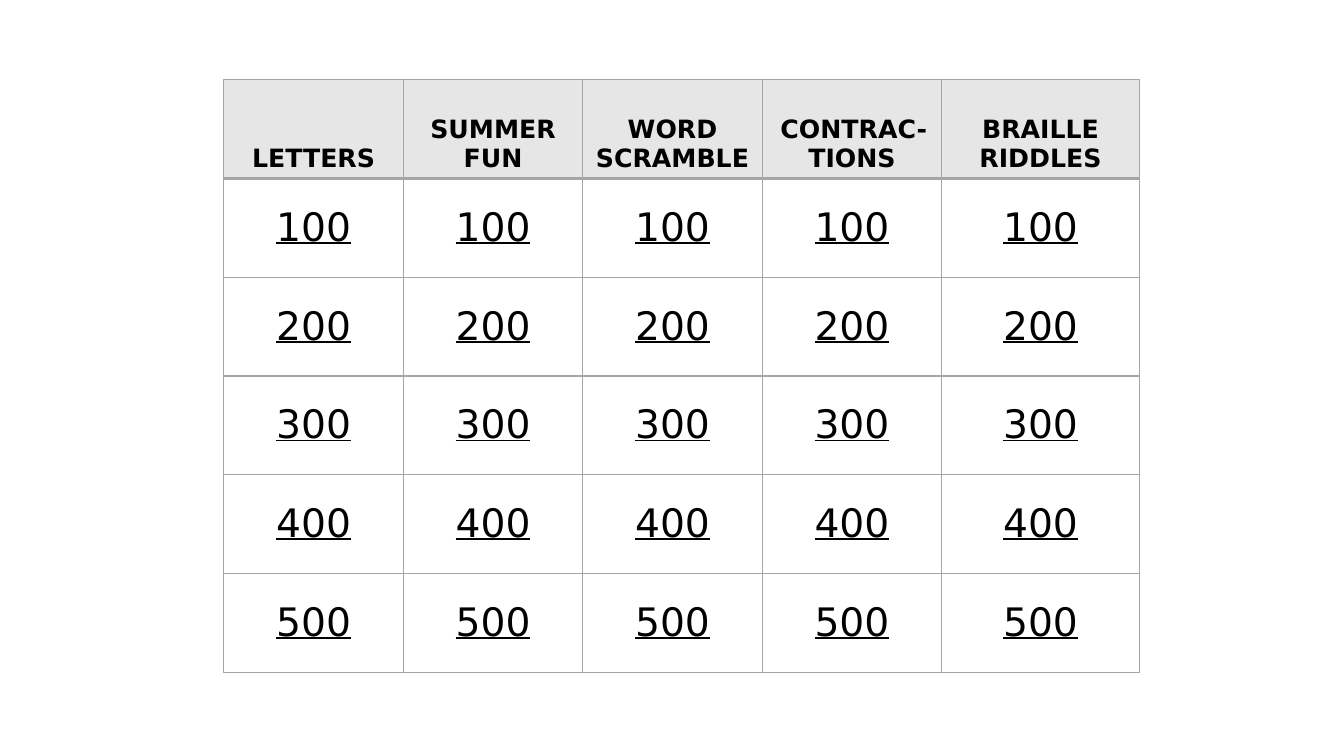
from dataclasses import dataclass

from lxml import etree
from pptx import Presentation
from pptx.dml import color
from pptx.enum import text as te
from pptx.oxml import ns
from pptx.util import Inches, Pt


@dataclass(frozen=True)
class Theme:
    font: str = "DejaVu Sans"
    ink: str = "000000"
    head: str = "E7E6E6"
    body: str = "FFFFFF"
    rule: str = "A5A5A5"
    head_size: int = 18
    body_size: int = 28
    thin: int = 1
    thick: int = 2


THEME = Theme()
TOPICS = ["LETTERS", "SUMMER FUN", "WORD SCRAMBLE", "CONTRAC-TIONS", "BRAILLE RIDDLES"]
POINTS = range(100, 501, 100)
WIDTHS = [1.78] * 4 + [1.96]
HEIGHT = 0.98


def write(cell, words, size, bold=False, line=False, anchor=te.MSO_ANCHOR.MIDDLE):
    cell.vertical_anchor = anchor
    para = cell.text_frame.paragraphs[0]
    para.alignment = te.PP_ALIGN.CENTER
    run = para.add_run()
    run.text = words
    font = run.font
    font.name = THEME.font
    font.size = Pt(size)
    font.bold = bold
    font.underline = line
    font.color.rgb = color.RGBColor.from_string(THEME.ink)


def border(cell, base):
    props = cell._tc.get_or_add_tcPr()
    for side in "LRTB":
        width = base if side == "B" else THEME.thin
        edge = etree.SubElement(props, ns.qn(f"a:ln{side}"), w=str(Pt(width)))
        fill = etree.SubElement(edge, ns.qn("a:solidFill"))
        etree.SubElement(fill, ns.qn("a:srgbClr"), val=THEME.rule)


def paint(cell, tone, base=THEME.thin):
    border(cell, base)
    cell.fill.solid()
    cell.fill.fore_color.rgb = color.RGBColor.from_string(tone)


def add_board(slide):
    rows = len(POINTS) + 1
    frame = slide.shapes.add_table(
        rows, len(TOPICS), Inches(2.22), Inches(0.79),
        Inches(sum(WIDTHS)), Inches(rows * HEIGHT))
    board = frame.table
    for col, width in zip(board.columns, WIDTHS):
        col.width = Inches(width)
    for row in board.rows:
        row.height = Inches(HEIGHT)
    for col, topic in enumerate(TOPICS):
        cell = board.cell(0, col)
        paint(cell, THEME.head, THEME.thick)
        write(cell, topic, THEME.head_size, bold=True, anchor=te.MSO_ANCHOR.BOTTOM)
        for row, score in enumerate(POINTS, 1):
            cell = board.cell(row, col)
            paint(cell, THEME.body)
            write(cell, str(score), THEME.body_size, line=True)


def main():
    deck = Presentation()
    deck.slide_width = Inches(13.33)
    deck.slide_height = Inches(7.5)
    add_board(deck.slides.add_slide(deck.slide_layouts[6]))
    deck.save("out.pptx")


if __name__ == "__main__":
    main()
